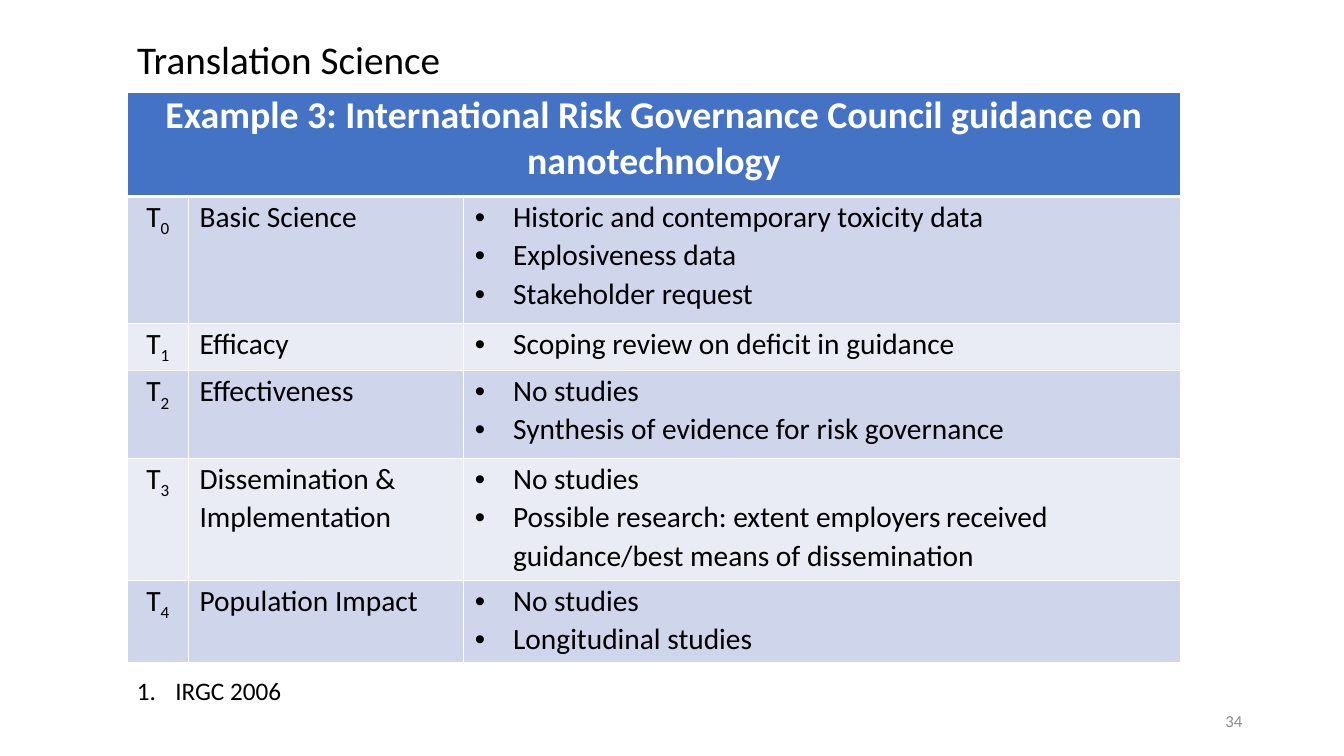
from dataclasses import dataclass

from lxml.etree import SubElement
from pptx import Presentation
from pptx.dml.color import RGBColor
from pptx.enum.text import MSO_ANCHOR, MSO_AUTO_SIZE, PP_ALIGN
from pptx.oxml.ns import qn
from pptx.util import Inches, Pt


@dataclass(frozen=True)
class Theme:
    font: str = "Calibri"
    black: str = "000000"
    white: str = "FFFFFF"
    gray: str = "8C8C8C"
    header: str = "4472C4"
    bands: tuple = ("CFD5EA", "E9EBF5")
    title_size: int = 28
    header_size: int = 27
    body_size: int = 21
    gap_size: int = 17
    note_size: int = 18
    number_size: int = 12


THEME = Theme()

HEADING = ("Example 3: International Risk Governance Council guidance on "
           "nanotechnology")
COL_WIDTHS = (0.61, 2.73, 7.11)
ROW_HEIGHTS = (1.03, 1.26, 0.47, 0.87, 1.21, 0.81)
STAGES = [
    (["Basic Science"], ["Historic and contemporary toxicity data",
                         "Explosiveness data", "Stakeholder request"]),
    (["Efficacy"], ["Scoping review on deficit in guidance"]),
    (["Effectiveness"], ["No studies",
                         "Synthesis of evidence for risk governance"]),
    (["Dissemination &", "Implementation"],
     ["No studies",
      [("Possible research: extent employers", {}),
       (" ", {"size": THEME.gap_size}),
       ("received guidance/best means of dissemination", {})]]),
    (["Population Impact"], ["No studies", "Longitudinal studies"]),
]


def add_bullet(p, bullet):
    """Give a paragraph a hanging bullet, or a number when bullet is '1.'."""
    pPr = p._p.get_or_add_pPr()
    pPr.set("marL", str(Inches(0.38)))
    pPr.set("indent", str(-Inches(0.38)))
    if bullet == "1.":
        SubElement(pPr, qn("a:buAutoNum"), type="arabicPeriod")
    else:
        SubElement(pPr, qn("a:buFont"), typeface="Arial")
        SubElement(pPr, qn("a:buChar"), char=bullet)


def write_text(tf, paragraphs, size, color=THEME.black, bold=False,
               align=PP_ALIGN.LEFT, spacing=1.0, after=0, bullet=None):
    """Write paragraphs; each is a string or a list of (text, format) runs."""
    tf.word_wrap = True
    for i, runs in enumerate(paragraphs):
        p = tf.paragraphs[0] if i == 0 else tf.add_paragraph()
        p.alignment = align
        p.line_spacing = spacing
        p.space_before, p.space_after = Pt(0), Pt(after)
        if bullet:
            add_bullet(p, bullet)
        for text, fmt in [(runs, {})] if isinstance(runs, str) else runs:
            r = p.add_run()
            r.text = text
            r.font.name = THEME.font
            r.font.size = Pt(fmt.get("size", size))
            r.font.bold = bold
            r.font.color.rgb = RGBColor.from_string(color)
            if "baseline" in fmt:
                r._r.get_or_add_rPr().set("baseline", str(fmt["baseline"]))


def style_cell(cell, fill, top=1, bottom=1):
    """Set margins, white borders and fill of a table cell."""
    cell.margin_left = cell.margin_right = Inches(0.11)
    cell.margin_top = cell.margin_bottom = 0
    tcPr = cell._tc.get_or_add_tcPr()
    for side, width in (("L", 1), ("R", 1), ("T", top), ("B", bottom)):
        ln = SubElement(tcPr, qn(f"a:ln{side}"), w=str(Pt(width)))
        SubElement(SubElement(ln, qn("a:solidFill")), qn("a:srgbClr"),
                   val=THEME.white)
    cell.fill.solid()
    cell.fill.fore_color.rgb = RGBColor.from_string(fill)


def place_title(s, left, top, width, height):
    title = s.shapes.title
    title.left, title.top, title.width, title.height = map(
        Inches, (left, top, width, height))
    tf = title.text_frame
    tf.auto_size = MSO_AUTO_SIZE.NONE
    tf.vertical_anchor = MSO_ANCHOR.TOP
    write_text(tf, ["Translation Science"], THEME.title_size)


def add_stage_table(s, left, top):
    frame = s.shapes.add_table(
        len(ROW_HEIGHTS), len(COL_WIDTHS), Inches(left), Inches(top),
        Inches(sum(COL_WIDTHS)), Inches(sum(ROW_HEIGHTS)))
    table = frame.table
    for col, width in zip(table.columns, COL_WIDTHS):
        col.width = Inches(width)
    for row, height in zip(table.rows, ROW_HEIGHTS):
        row.height = Inches(height)

    # Heading across all columns
    head = table.cell(0, 0)
    head.merge(table.cell(0, len(COL_WIDTHS) - 1))
    for cell in table.rows[0].cells:
        style_cell(cell, THEME.header, bottom=3)
    write_text(head.text_frame, [HEADING], THEME.header_size, bold=True,
               color=THEME.white, align=PP_ALIGN.CENTER, after=8)

    # One banded row per stage
    for n, (names, findings) in enumerate(STAGES):
        code = [("T", {}), (str(n), {"baseline": -25000})]
        contents = (([code], {"align": PP_ALIGN.CENTER}), (names, {}),
                    (findings, {"bullet": "•"}))
        for cell, (text, fmt) in zip(table.rows[n + 1].cells, contents):
            style_cell(cell, THEME.bands[n % 2], top=3 if n == 0 else 1)
            write_text(cell.text_frame, text, THEME.body_size, spacing=1.07,
                       **fmt)


def add_label(s, left, top, width, height, text, size,
              anchor=MSO_ANCHOR.TOP, **fmt):
    sp = s.shapes.add_textbox(*map(Inches, (left, top, width, height)))
    sp.text_frame.vertical_anchor = anchor
    write_text(sp.text_frame, [text], size, **fmt)


def main():
    prs = Presentation()
    prs.slide_width, prs.slide_height = Inches(13.33), Inches(7.5)
    s = prs.slides.add_slide(prs.slide_layouts[5])

    place_title(s, 1.26, 0.3, 5.02, 0.57)
    add_stage_table(s, 1.26, 0.92)
    # Reference and slide number
    add_label(s, 1.26, 6.63, 3.28, 0.41, "IRGC 2006", THEME.note_size,
              spacing=1.07, after=8, bullet="1.")
    add_label(s, 9.42, 6.95, 3, 0.4, "34", THEME.number_size,
              anchor=MSO_ANCHOR.MIDDLE, color=THEME.gray,
              align=PP_ALIGN.RIGHT)

    prs.save("out.pptx")


if __name__ == "__main__":
    main()
